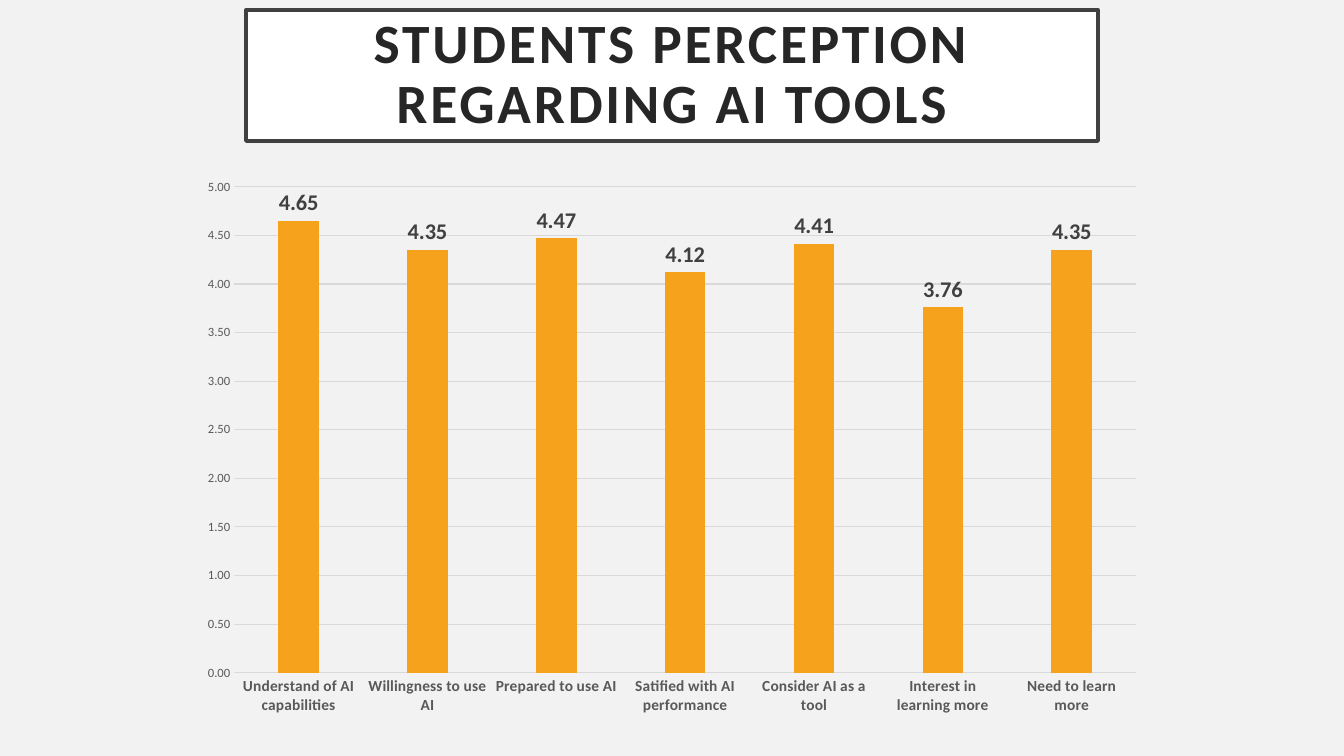
import pptx
import pptx.chart.data
import pptx.dml.color
import pptx.enum.chart
import pptx.enum.text
import pptx.util

FONT = "Calibri"
GRID = "D9D9D9"
AXIS_TEXT = "595959"
RATINGS = {
    "Understand of AI capabilities": 4.65,
    "Willingness to use AI": 4.35,
    "Prepared to use AI": 4.47,
    "Satified with AI performance": 4.12,
    "Consider AI as a tool": 4.41,
    "Interest in learning more": 3.76,
    "Need to learn more": 4.35,
}


def color(value):
    return pptx.dml.color.RGBColor.from_string(value)


def paint(fill, value):
    fill.solid()
    fill.fore_color.rgb = color(value)


def style_line(line, value, width):
    paint(line.fill, value)
    line.width = pptx.util.Pt(width)


def style_font(font, size, value, bold=False):
    font.name = FONT
    font.size = pptx.util.Pt(size)
    font.bold = bold
    font.color.rgb = color(value)


def inches(box):
    return [pptx.util.Inches(length) for length in box]


def add_title(slide, box, text):
    title = slide.shapes.title
    title.left, title.top, title.width, title.height = inches(box)
    paint(title.fill, "FFFFFF")
    style_line(title.line, "404040", 2.5)

    frame = title.text_frame
    frame.word_wrap = True
    frame.auto_size = pptx.enum.text.MSO_AUTO_SIZE.NONE
    frame.vertical_anchor = pptx.enum.text.MSO_ANCHOR.MIDDLE
    inset = pptx.util.Inches(0.2)
    frame.margin_left = frame.margin_right = inset
    frame.margin_top = frame.margin_bottom = inset

    paragraph = frame.paragraphs[0]
    paragraph.alignment = pptx.enum.text.PP_ALIGN.CENTER
    paragraph.line_spacing = 0.9
    run = paragraph.add_run()
    run.text = text
    style_font(run.font, 39.6, "262626", bold=True)
    run.font._element.set("spc", "200")


def style_axes(chart):
    tick_none = pptx.enum.chart.XL_TICK_MARK.NONE
    for axis in (chart.category_axis, chart.value_axis):
        axis.major_tick_mark = axis.minor_tick_mark = tick_none

    category_axis = chart.category_axis
    style_font(category_axis.tick_labels.font, 11, AXIS_TEXT, bold=True)
    style_line(category_axis.format.line, GRID, 0.75)

    value_axis = chart.value_axis
    value_axis.minimum_scale = 0
    value_axis.maximum_scale = 5
    value_axis.major_unit = 0.5
    value_axis.format.line.fill.background()
    style_line(value_axis.major_gridlines.format.line, GRID, 0.75)
    style_font(value_axis.tick_labels.font, 9, AXIS_TEXT)
    value_axis.tick_labels.number_format = "0.00"
    value_axis.tick_labels.number_format_is_linked = False


def add_ratings_chart(slide, box):
    chart_data = pptx.chart.data.CategoryChartData(number_format="0.00")
    chart_data.categories = list(RATINGS)
    chart_data.add_series("Series 1", list(RATINGS.values()))
    chart = slide.shapes.add_chart(
        pptx.enum.chart.XL_CHART_TYPE.COLUMN_CLUSTERED, *inches(box), chart_data
    ).chart
    chart.has_legend = False
    chart.has_title = False
    style_font(chart.font, 10, "000000")
    style_axes(chart)

    plot = chart.plots[0]
    plot.vary_by_categories = False
    plot.gap_width = 219
    plot.overlap = -27
    series = plot.series[0]
    paint(series.format.fill, "F6A21D")

    labels = series.data_labels
    labels.show_value = True
    labels.number_format = "0.00"
    labels.number_format_is_linked = False
    labels.position = pptx.enum.chart.XL_LABEL_POSITION.OUTSIDE_END
    style_font(labels.font, 16, "404040", bold=True)


def main():
    presentation = pptx.Presentation()
    presentation.slide_width = pptx.util.Inches(13.33)
    presentation.slide_height = pptx.util.Inches(7.5)
    title_only = presentation.slide_layouts.get_by_name("Title Only")
    slide = presentation.slides.add_slide(title_only)
    paint(slide.background.fill, "F2F2F2")
    add_title(slide, (2.44, 0.1, 8.45, 1.3), "STUDENTS PERCEPTION REGARDING AI TOOLS")
    add_ratings_chart(slide, (1.87, 1.67, 9.59, 5.53))
    presentation.save("out.pptx")


if __name__ == "__main__":
    main()
